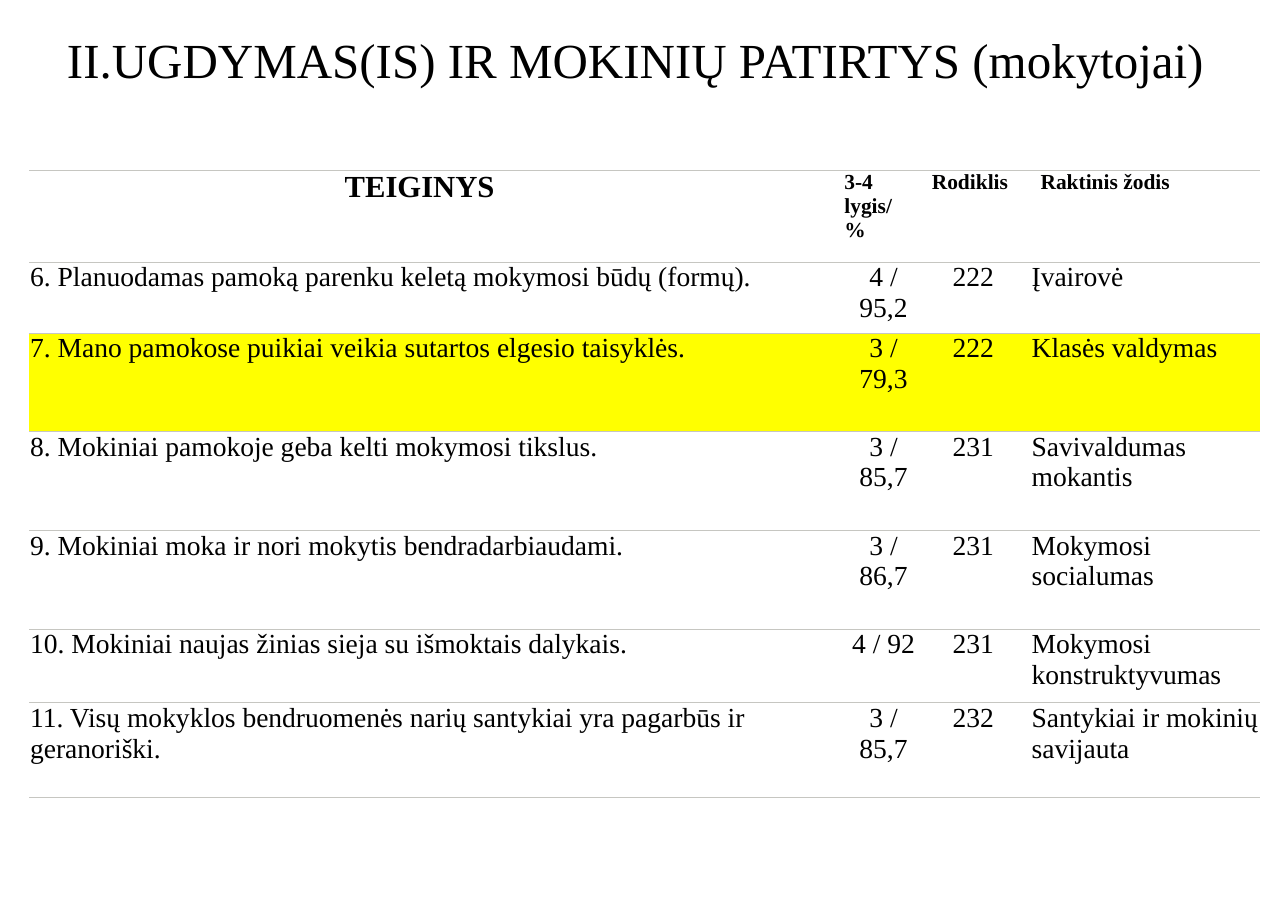
import pptx
import pptx.util
import pptx.dml.color
import pptx.enum.text
import lxml.etree

Pt = pptx.util.Pt
RGB = pptx.dml.color.RGBColor.from_string
LEFT = pptx.enum.text.PP_ALIGN.LEFT
CENTER = pptx.enum.text.PP_ALIGN.CENTER

# Content
TITLE = "II.UGDYMAS(IS) IR MOKINIŲ PATIRTYS (mokytojai)"
HEADER = ("TEIGINYS", "3-4 lygis/\n%", "Rodiklis", "Raktinis žodis")
STATEMENTS = [
    ("6. Planuodamas pamoką parenku keletą mokymosi būdų (formų).", "4 / 95,2", "222", "Įvairovė"),
    ("7. Mano pamokose puikiai veikia sutartos elgesio taisyklės.", "3 / 79,3", "222", "Klasės valdymas"),
    ("8. Mokiniai pamokoje geba kelti mokymosi tikslus.", "3 / 85,7", "231", "Savivaldumas mokantis"),
    ("9. Mokiniai moka ir nori mokytis bendradarbiaudami.", "3 / 86,7", "231", "Mokymosi socialumas"),
    ("10. Mokiniai naujas žinias sieja su išmoktais dalykais.", "4 / 92", "231", "Mokymosi konstruktyvumas"),
    ("11. Visų mokyklos bendruomenės narių santykiai yra pagarbūs ir geranoriški.",
     "3 / 85,7", "232", "Santykiai ir mokinių savijauta"),
]
HIGHLIGHTED_ROW = 2

# Layout and theme
THEME = dict(font="Times New Roman", text="000000", rule="C6C6C1", highlight="FFFF00",
             title=32, first_head=20, head=14, body=18, rule_width=0.75)
COL_WIDTHS = (509.8, 72, 66.2, 156.2)
ROW_HEIGHTS = (60, 46.5, 64.5, 64.5, 64.5, 48.2, 61.7)
HEAD_FORMATS = [dict(align=CENTER, indent=0.7, before=0.2, size=THEME["first_head"]),
                dict(indent=23, before=0.2), dict(align=CENTER, before=0.1),
                dict(indent=13, before=0.1)]
BODY_FORMATS = [dict(indent=0.7), dict(align=CENTER, indent=25.2),
                dict(align=CENTER, indent=4.3), dict(indent=7.2)]


def write(tf, text, size=THEME["body"], bold=False, align=LEFT, indent=0, before=0):
    for i, line in enumerate(text.split("\n")):
        p = tf.add_paragraph() if i else tf.paragraphs[0]
        p.alignment, p.space_before = align, Pt(before)
        p._p.get_or_add_pPr().set("marL", str(Pt(indent)))
        r = p.add_run()
        r.text = line
        r.font.name, r.font.size, r.font.bold = THEME["font"], Pt(size), bold
        r.font.color.rgb = RGB(THEME["text"])


def add_rules(cell):
    """Draw the top and bottom borders; leave the sides open."""
    ns = "{http://schemas.openxmlformats.org/drawingml/2006/main}"
    tcPr = cell._tc.get_or_add_tcPr()
    for i, side in enumerate(("lnL", "lnR", "lnT", "lnB")):
        ln = lxml.etree.Element(ns + side, w=str(Pt(THEME["rule_width"])))
        if side in ("lnT", "lnB"):
            fill = lxml.etree.SubElement(ln, ns + "solidFill")
            lxml.etree.SubElement(fill, ns + "srgbClr", val=THEME["rule"])
        else:
            lxml.etree.SubElement(ln, ns + "noFill")
        tcPr.insert(i, ln)


def main():
    prs = pptx.Presentation()
    prs.slide_width, prs.slide_height = Pt(841.7), Pt(595.4)
    s = prs.slides.add_slide(prs.slide_layouts[6])

    # Statement table
    rows = [HEADER] + STATEMENTS
    table = s.shapes.add_table(len(rows), len(HEADER), Pt(19), Pt(111.3),
                               Pt(sum(COL_WIDTHS)), Pt(sum(ROW_HEIGHTS))).table
    table.first_row = table.horz_banding = False
    for col, width in zip(table.columns, COL_WIDTHS):
        col.width = Pt(width)
    for i, (texts, height) in enumerate(zip(rows, ROW_HEIGHTS)):
        table.rows[i].height = Pt(height)
        for j, text in enumerate(texts):
            cell = table.cell(i, j)
            cell.margin_left = cell.margin_right = cell.margin_top = cell.margin_bottom = 0
            if i == HIGHLIGHTED_ROW:
                cell.fill.solid()
                cell.fill.fore_color.rgb = RGB(THEME["highlight"])
            else:
                cell.fill.background()
            add_rules(cell)
            if i == 0:
                fmt = dict(size=THEME["head"], bold=True) | HEAD_FORMATS[j]
            else:
                fmt = BODY_FORMATS[j]
            write(cell.text_frame, text, **fmt)

    # Title
    tf = s.shapes.add_textbox(Pt(36.7), Pt(15.8), Pt(768.2), Pt(67.7)).text_frame
    tf.word_wrap = True
    write(tf, TITLE, size=THEME["title"])

    prs.save("out.pptx")


if __name__ == "__main__":
    main()
